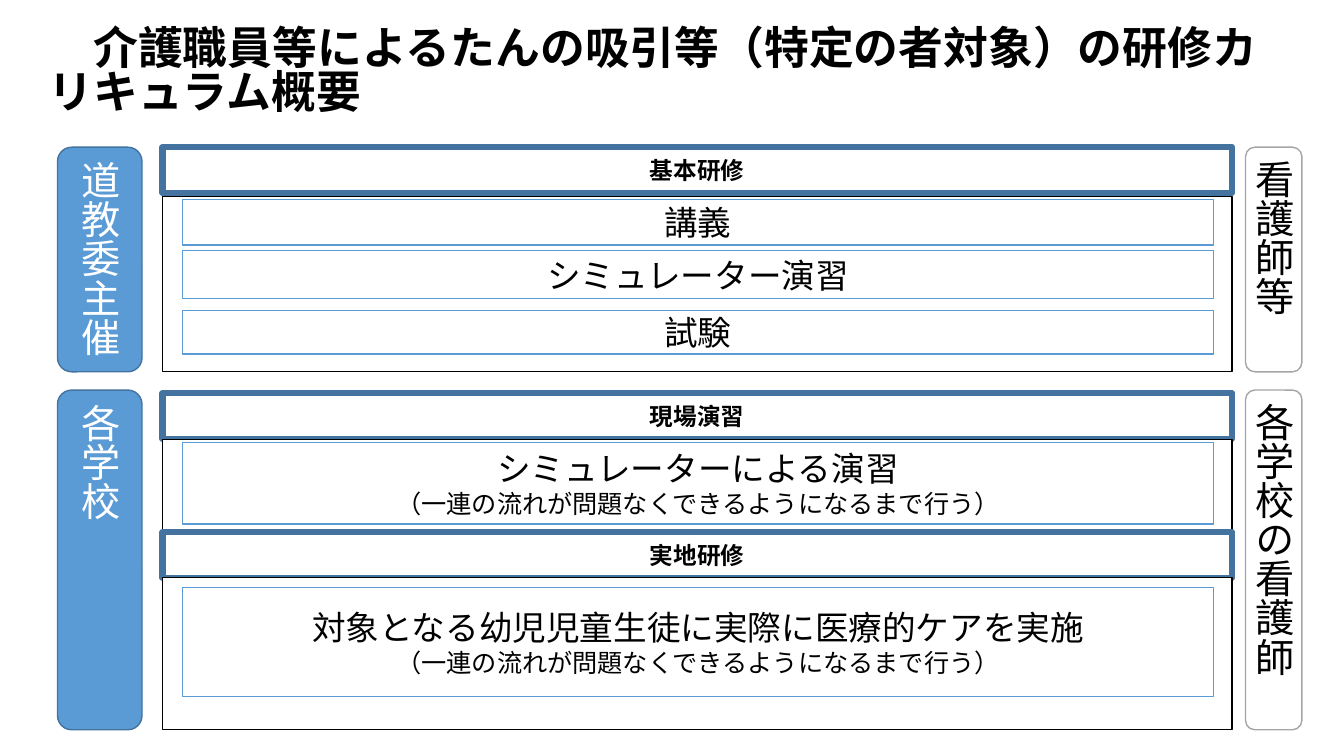
from pptx import Presentation
from pptx.dml.color import RGBColor
from pptx.enum.shapes import MSO_SHAPE
from pptx.enum.text import MSO_ANCHOR, MSO_AUTO_SIZE, PP_ALIGN
from pptx.util import Cm, Pt

RECT, ROUND = MSO_SHAPE.RECTANGLE, MSO_SHAPE.ROUNDED_RECTANGLE
TOP, MIDDLE = MSO_ANCHOR.TOP, MSO_ANCHOR.MIDDLE
LEFT, CENTER = PP_ALIGN.LEFT, PP_ALIGN.CENTER
NO_FIT = MSO_AUTO_SIZE.NONE

WHITE, BLACK = "FFFFFF", "000000"
BLUE, NAVY, GREY = "5B9BD5", "43739E", "A5A5A5"
NOTE = "（一連の流れが問題なくできるようになるまで行う）"

# Columns: left edge and width in cm
MAIN, INNER = (4.1, 26.95), (4.6, 25.98)
HOST, NURSE = (1.45, 2.13), (31.39, 1.42)

# Stages: heading, heading top, frame top, frame height,
# items (top, height, lines)
STAGES = [
    ("基本研修", 3.71, 4.95, 4.42, [
        (5.03, 1.15, ["講義"]),
        (6.32, 1.2, ["シミュレーター演習"]),
        (7.82, 1.1, ["試験"])]),
    ("現場演習", 9.91, 11.07, 3.35, [
        (11.15, 2.06, ["シミュレーターによる演習", NOTE])]),
    ("実地研修", 13.41, 14.55, 3.84, [
        (14.81, 2.75, ["対象となる幼児児童生徒に実際に医療的ケアを実施", NOTE])]),
]
# Rows of side labels: top, height, host, nurse
SIDES = [
    (3.71, 5.66, "道教委主催", "看護師等"),
    (9.83, 8.56, "各学校", "各学校の看護師"),
]


def color(code):
    return RGBColor.from_string(code)


def add_run(para, text, size, face, ink=BLACK, bold=False):
    run = para.add_run()
    run.text = text
    font = run.font
    font.size, font.name, font.bold = Pt(size), face, bold
    font.color.rgb = color(ink)


def add_box(slide, kind, col, top, height, fill, line, width=1):
    left, wide = col
    box = slide.shapes.add_shape(kind, Cm(left), Cm(top), Cm(wide), Cm(height))
    box.shadow.inherit = False
    box.fill.solid()
    box.fill.fore_color.rgb = color(fill)
    box.line.color.rgb = color(line)
    box.line.width = Pt(width)
    return box


def add_lines(box, lines, sizes, face, ink=BLACK, bold=False):
    frame = box.text_frame
    frame.word_wrap = True
    frame.vertical_anchor = MIDDLE
    for i, (text, size) in enumerate(zip(lines, sizes)):
        para = frame.add_paragraph() if i else frame.paragraphs[0]
        para.alignment = CENTER
        add_run(para, text, size, face, ink, bold)


def add_stage(slide, head, top, base, height, items):
    band = add_box(slide, RECT, MAIN, top, 1.15, WHITE, NAVY, 4.5)
    add_lines(band, [head], [16.9], "Arial", bold=True)
    add_box(slide, RECT, MAIN, base, height, WHITE, BLACK)
    for y, tall, lines in items:
        item = add_box(slide, RECT, INNER, y, tall, WHITE, BLUE)
        add_lines(item, lines, [24, 18], "Arial")


def add_side(slide, col, top, height, text, fill, line, ink):
    side = add_box(slide, ROUND, col, top, height, fill, line)
    add_lines(side, [text], [28], "Calibri", ink)
    side.text_frame._txBody.bodyPr.set("vert", "eaVert")


def set_title(slide, text):
    title = slide.shapes.title
    title.left, title.top = Cm(0.97), Cm(0.61)
    title.width, title.height = Cm(31.83), Cm(3)
    frame = title.text_frame
    frame.word_wrap, frame.auto_size = True, NO_FIT
    frame.vertical_anchor = TOP
    para = frame.paragraphs[0]
    para.alignment, para.line_spacing = LEFT, 0.82
    add_run(para, text, 32, "Noto Sans CJK JP", bold=True)


def main():
    deck = Presentation()
    deck.slide_width, deck.slide_height = Cm(33.87), Cm(19.05)
    slide = deck.slides.add_slide(deck.slide_layouts[5])
    set_title(slide, "　介護職員等によるたんの吸引等（特定の者対象）の研修カリキュラム概要")

    # Training stages
    for stage in STAGES:
        add_stage(slide, *stage)

    # Side labels: organiser on the left, instructor on the right
    for top, height, host, nurse in SIDES:
        add_side(slide, HOST, top, height, host, BLUE, NAVY, WHITE)
        add_side(slide, NURSE, top, height, nurse, WHITE, GREY, BLACK)

    deck.save("out.pptx")


if __name__ == "__main__":
    main()
